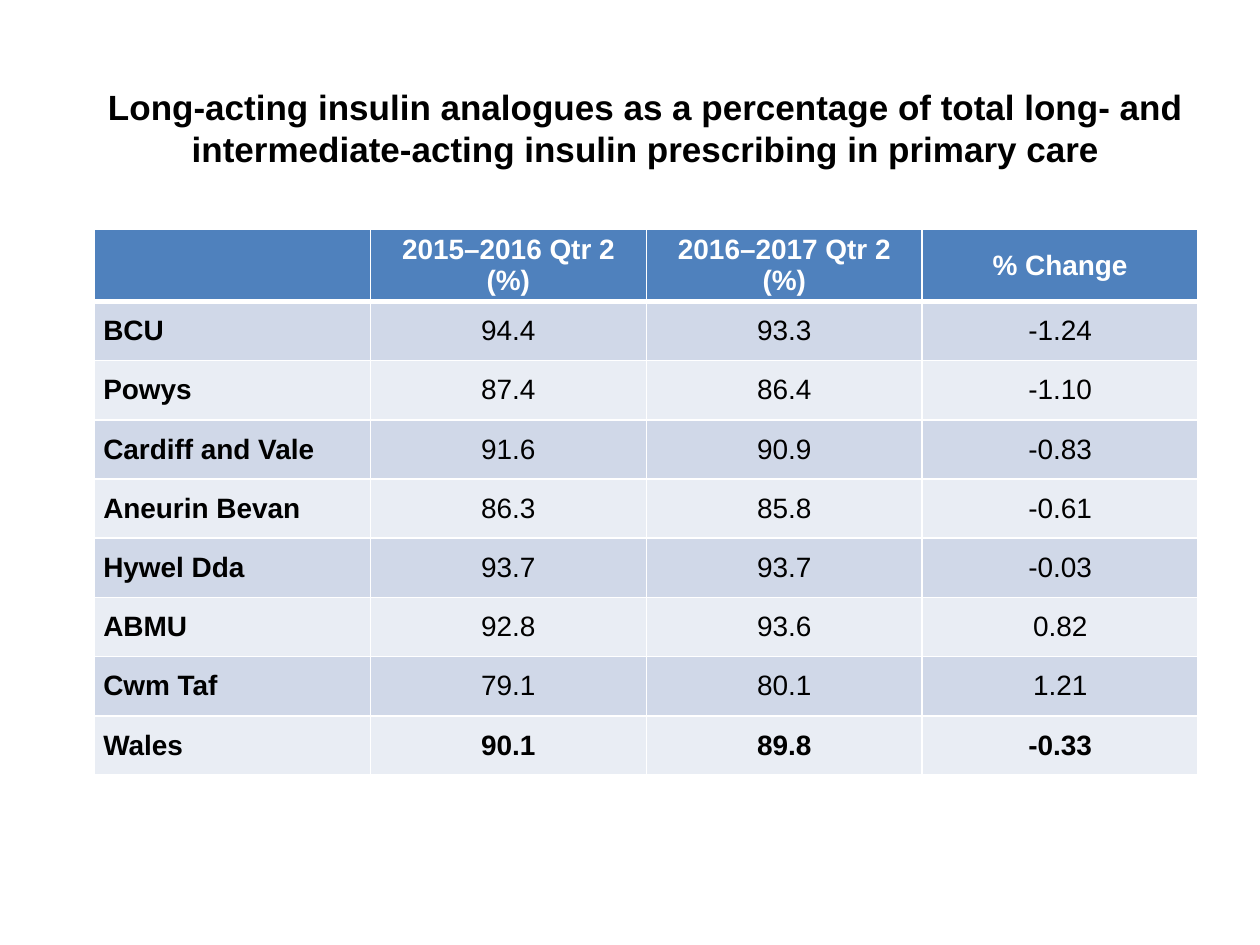
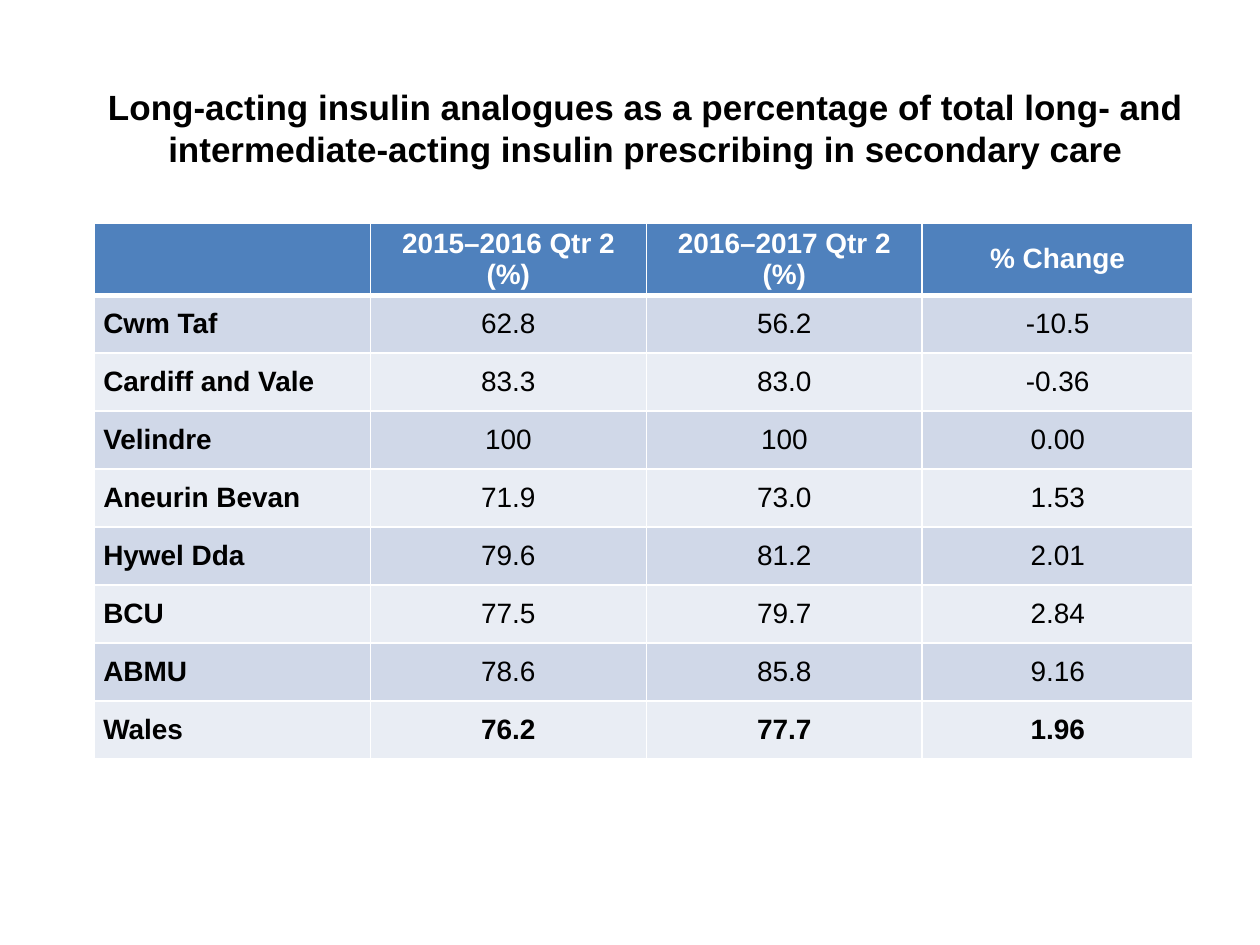
from lxml import etree
from pptx import Presentation
from pptx.dml.color import RGBColor
from pptx.enum.text import MSO_ANCHOR, PP_ALIGN
from pptx.oxml.ns import qn
from pptx.util import Inches, Pt

CENTER, LEFT = PP_ALIGN.CENTER, PP_ALIGN.LEFT
MIDDLE = MSO_ANCHOR.MIDDLE
BLACK = RGBColor(0x00, 0x00, 0x00)
WHITE = RGBColor(0xFF, 0xFF, 0xFF)
HEADER_BLUE = RGBColor(0x4F, 0x81, 0xBD)
BANDS = (RGBColor(0xD0, 0xD8, 0xE8), RGBColor(0xE9, 0xED, 0xF4))

TITLE_BOX = (0.75, 0.6, 8.75, 0.83)
TITLE = ("Long-acting insulin analogues as a percentage of total long- and "
         "intermediate-acting insulin prescribing in {} care")
TITLE_FONT = {"name": "Arial", "size": Pt(20), "bold": True}
CELL_FONT = {"name": "Arial", "size": Pt(16)}
CELL_FORMAT = {"vertical_anchor": MIDDLE,
               "margin_left": Inches(0.07), "margin_right": Inches(0.07),
               "margin_top": Inches(0.02), "margin_bottom": Inches(0.02)}
HEADER = ("", "2015–2016 Qtr 2 (%)", "2016–2017 Qtr 2 (%)", "% Change")

PRIMARY_CARE = (
    ("BCU", "94.4", "93.3", "-1.24"),
    ("Powys", "87.4", "86.4", "-1.10"),
    ("Cardiff and Vale", "91.6", "90.9", "-0.83"),
    ("Aneurin Bevan", "86.3", "85.8", "-0.61"),
    ("Hywel Dda", "93.7", "93.7", "-0.03"),
    ("ABMU", "92.8", "93.6", "0.82"),
    ("Cwm Taf", "79.1", "80.1", "1.21"),
    ("Wales", "90.1", "89.8", "-0.33"),
)
SECONDARY_CARE = (
    ("Cwm Taf", "62.8", "56.2", "-10.5"),
    ("Cardiff and Vale", "83.3", "83.0", "-0.36"),
    ("Velindre", "100", "100", "0.00"),
    ("Aneurin Bevan", "71.9", "73.0", "1.53"),
    ("Hywel Dda", "79.6", "81.2", "2.01"),
    ("BCU", "77.5", "79.7", "2.84"),
    ("ABMU", "78.6", "85.8", "9.16"),
    ("Wales", "76.2", "77.7", "1.96"),
)


def apply(target, values):
    for name, value in values.items():
        setattr(target, name, value)


def add_title(s, box, text):
    tf = s.shapes.add_textbox(*map(Inches, box)).text_frame
    apply(tf, {"word_wrap": True, "vertical_anchor": MIDDLE})
    p = tf.paragraphs[0]
    p.alignment = CENTER
    r = p.add_run()
    r.text = text
    apply(r.font, TITLE_FONT)
    r.font.color.rgb = BLACK


def set_borders(cell, widths):
    """Draw white borders; widths maps a side (L, R, T, B) to points."""
    tc_pr = cell._tc.get_or_add_tcPr()
    for i, (side, width) in enumerate(widths.items()):
        ln = etree.Element(qn(f"a:ln{side}"), w=str(Pt(width)))
        fill = etree.SubElement(ln, qn("a:solidFill"))
        etree.SubElement(fill, qn("a:srgbClr"), val=str(WHITE))
        tc_pr.insert(i, ln)


def fill_cell(cell, text, fill, color, bold, align):
    apply(cell, CELL_FORMAT)
    cell.fill.solid()
    cell.fill.fore_color.rgb = fill
    p = cell.text_frame.paragraphs[0]
    p.alignment = align
    apply(p.font, CELL_FONT)
    if text:
        r = p.add_run()
        r.text = text
        apply(r.font, {**CELL_FONT, "bold": bold})
        r.font.color.rgb = color


def add_insulin_table(s, left, top, col_widths, row_height, records):
    rows = (HEADER, *records)
    table = s.shapes.add_table(
        len(rows), len(HEADER), Inches(left), Inches(top),
        Inches(sum(col_widths)), Inches(row_height * len(rows))).table
    for column, width in zip(table.columns, col_widths):
        column.width = Inches(width)
    for i, record in enumerate(rows):
        table.rows[i].height = Inches(row_height)
        is_header, is_total = i == 0, i == len(rows) - 1
        fill = HEADER_BLUE if is_header else BANDS[(i - 1) % 2]
        for j, text in enumerate(record):
            cell = table.cell(i, j)
            fill_cell(cell, text, fill,
                      color=WHITE if is_header else BLACK,
                      bold=is_header or is_total or j == 0,
                      align=LEFT if j == 0 else CENTER)
            set_borders(cell, {"L": 1, "R": 1, "T": 3 if i == 1 else 1,
                               "B": 3 if is_header else 1})


def add_care_slide(prs, care, top, last_width, row_height, records):
    s = prs.slides.add_slide(prs.slide_layouts[6])
    add_title(s, TITLE_BOX, TITLE.format(care))
    add_insulin_table(s, TITLE_BOX[0], top, (2.19, 2.19, 2.19, last_width),
                      row_height, records)


def main():
    prs = Presentation()
    prs.slide_width, prs.slide_height = Inches(10), Inches(7.5)
    add_care_slide(prs, "primary", 1.82, 2.19, 0.47, PRIMARY_CARE)
    add_care_slide(prs, "secondary", 1.77, 2.15, 0.46, SECONDARY_CARE)
    prs.save("out.pptx")


if __name__ == "__main__":
    main()
